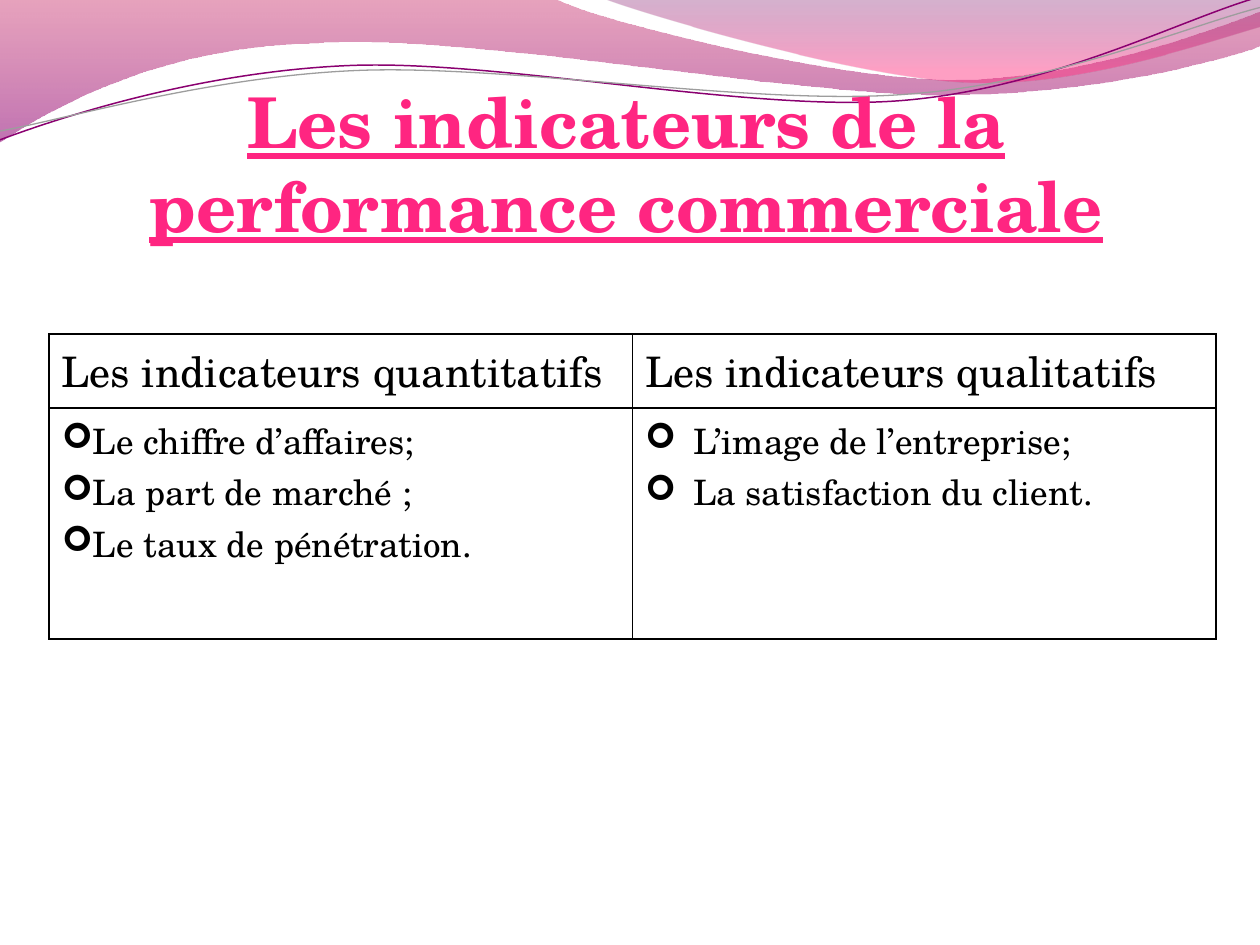
"""Build a slide comparing quantitative and qualitative sales indicators."""
import math
from lxml import etree
from pptx import Presentation
from pptx.dml.color import RGBColor
from pptx.enum import text
from pptx.oxml import ns
from pptx.util import Inches, Pt

FONT = "TeX Gyre Schola"
BLACK = RGBColor(0x00, 0x00, 0x00)
PINK = RGBColor(0xFF, 0x25, 0x81)
ROSE = RGBColor(0xC9, 0x32, 0x6D)
PURPLE = RGBColor(0x8E, 0x00, 0x73)
PLUM = RGBColor(0x73, 0x00, 0x5E)
BRIGHT_PINK = RGBColor(0xFF, 0x2D, 0x7F)
VIOLET = RGBColor(0x8A, 0x00, 0x70)
GREY = RGBColor(0x9D, 0x9D, 0x9D)
TILT = 2.7


def add_outline(slide, start, segments, close):
    points = [pair for segment in segments for pair in zip(segment[::2], segment[1::2])]
    builder = slide.shapes.build_freeform(Inches(start[0]), Inches(start[1]))
    builder.add_line_segments([(Inches(x), Inches(y)) for x, y in points], close=close)
    shape = builder.convert_to_shape()
    shape.shadow.inherit = False
    lines = iter(list(shape.element.spPr.iter(ns.qn("a:lnTo"))))
    for segment in segments:
        line = next(lines)
        if len(segment) == 6:
            curve = etree.Element(ns.qn("a:cubicBezTo"))
            line.addprevious(curve)
            for node in (line, next(lines), next(lines)):
                curve.append(node[0])
                node.getparent().remove(node)
    return shape


def add_text(paragraph, wording, size, color):
    run = paragraph.add_run()
    run.text = wording
    run.font.name = FONT
    run.font.size = Pt(size)
    run.font.color.rgb = color
    return run


presentation = Presentation()
presentation.slide_width = Inches(10)
presentation.slide_height = Inches(7.5)
slide = presentation.slides.add_slide(presentation.slide_layouts[6])

waves = [
    ((0, 0), [(4.4, -0.01), (4.76, 0.17, 6.64, 0.63, 7.58, 0.63),
              (8.53, 0.63, 9.58, 0.26, 10, 0.09), (10.01, 0.36),
              (9.83, 0.44, 8.7, 0.76, 7.46, 0.75), (6.22, 0.75, 3.82, 0.28, 2.57, 0.34),
              (1.29, 0.36, 0.46, 0.83, -0.01, 1.13)],
     [(0, ROSE, 45), (1, PURPLE, 55)]),
    ((4.79, -0.01), [(5.09, 0.11, 6.82, 0.62, 7.69, 0.65),
                     (8.56, 0.69, 9.61, 0.32, 10, 0.21), (10, 0)],
     [(0, PLUM, 30), (0.8, BRIGHT_PINK, 45)]),
]
for start, segments, stops in waves:
    wave = add_outline(slide, start, segments, True)
    wave.line.fill.background()
    wave.fill.gradient()
    wave.fill.gradient_angle = 270
    for stop, (position, color, _) in zip(wave.fill.gradient_stops, stops):
        stop.position = position
        stop.color.rgb = color
    for node, (_, _, opacity) in zip(wave.element.spPr.iter(ns.qn("a:srgbClr")), stops):
        etree.SubElement(node, ns.qn("a:alpha"), val=str(opacity * 1000))

strands = [
    ([(0, 1.11), (0.48, 0.93, 1.58, 0.57, 2.77, 0.52), (3.95, 0.47, 5.93, 0.89, 7.13, 0.8),
      (8.33, 0.71, 9.38, 0.15, 9.98, -0.02)], (4.99, 0.57), VIOLET, 0.85),
    ([(0, 1.04), (0.47, 0.96, 1.64, 0.61, 2.83, 0.56), (4.03, 0.51, 5.97, 0.84, 7.17, 0.75),
      (8.36, 0.67, 9.41, 0.21, 10, 0.06)], (5, 0.59), GREY, 0.75),
]
cosine, sine = math.cos(math.radians(TILT)), math.sin(math.radians(TILT))
for segments, (center_x, center_y), color, width in strands:
    level = []
    for segment in segments:
        offsets = [(x - center_x, y - center_y) for x, y in zip(segment[::2], segment[1::2])]
        level.append([value for x, y in offsets for value in
                      (center_x + x * cosine - y * sine, center_y + x * sine + y * cosine)])
    strand = add_outline(slide, level[0], level[1:], False)
    strand.rotation = 360 - TILT
    strand.fill.background()
    strand.line.color.rgb = color
    strand.line.width = Pt(width)

title = slide.shapes.add_textbox(Inches(0.47), Inches(0.63), Inches(9), Inches(1.33))
frame = title.text_frame
frame.word_wrap = True
frame.vertical_anchor = text.MSO_ANCHOR.BOTTOM
frame.margin_left = frame.margin_right = frame.margin_bottom = 0
frame.margin_top = Inches(0.05)
paragraph = frame.paragraphs[0]
paragraph.alignment = text.PP_ALIGN.CENTER
run = add_text(paragraph, "Les indicateurs de la performance commerciale", 40, PINK)
run.font.bold = True
run.font.underline = True

columns = [
    ("Les indicateurs quantitatifs", 0,
     ["Le chiffre d’affaires;", "La part de marché ;", "Le taux de pénétration."]),
    ("Les indicateurs qualitatifs", 0.38,
     ["L’image de l’entreprise;", "La satisfaction du client."]),
]
table = slide.shapes.add_table(
    2, 2, Inches(0.39), Inches(2.65), Inches(9.26), Inches(2.42)).table
table.first_row = table.horz_banding = False
for row, height in zip(table.rows, (0.59, 1.83)):
    row.height = Inches(height)

for column, (heading, indent, items) in enumerate(columns):
    for row, (lines, size) in enumerate([([heading], 24), (items, 20)]):
        cell = table.cell(row, column)
        cell.fill.background()
        properties = cell._tc.get_or_add_tcPr()
        for index, side in enumerate(("lnL", "lnR", "lnT", "lnB")):
            border = etree.Element(ns.qn(f"a:{side}"), w=str(Pt(1)))
            fill = etree.SubElement(border, ns.qn("a:solidFill"))
            etree.SubElement(fill, ns.qn("a:srgbClr"), val=str(BLACK))
            properties.insert(index, border)
        for index, line in enumerate(lines):
            frame = cell.text_frame
            paragraph = frame.add_paragraph() if index else frame.paragraphs[0]
            add_text(paragraph, line, size, BLACK)
            if row:
                bullet = paragraph._p.get_or_add_pPr()
                bullet.set("marL", str(Inches(indent)))
                bullet.set("indent", str(-Inches(indent)))
                etree.SubElement(bullet, ns.qn("a:buFont"), typeface="Wingdings")
                etree.SubElement(bullet, ns.qn("a:buChar"), char="➢")

presentation.save("out.pptx")
